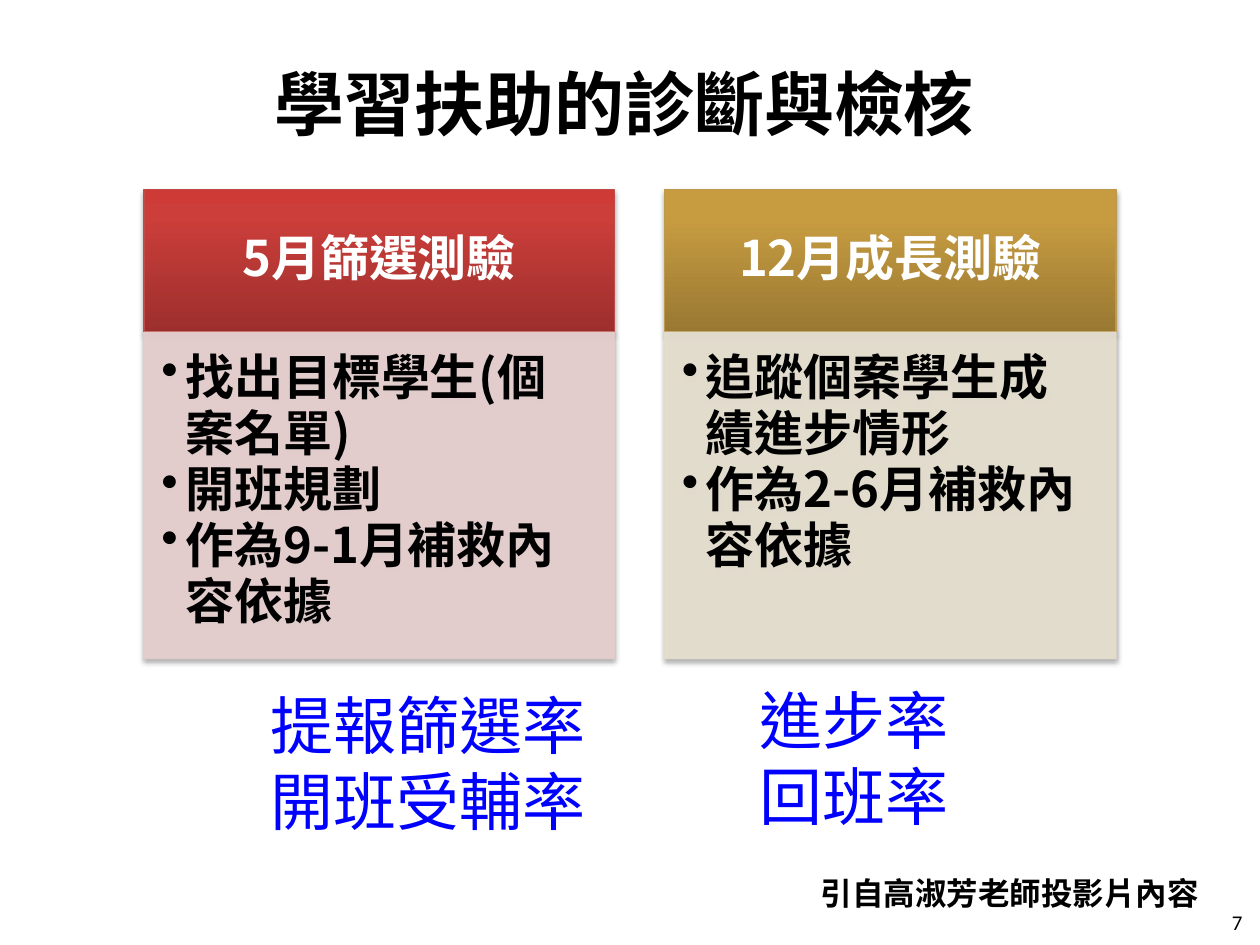
from lxml import etree
from pptx import Presentation
from pptx.dml.color import RGBColor
from pptx.enum import shapes, text
from pptx.oxml.ns import qn
from pptx.util import Pt

SANS = "Noto Sans CJK SC"
CARDS = [
    {
        "left": 82.2, "width": 268.8, "heading": "5月篩選測驗",
        "points": ["找出目標學生(個案名單)", "開班規劃", "作為9-1月補救內容依據"],
        "gradient": [(0, "9C2F2D"), (80, "CB3E3A"), (100, "CE3B37")],
        "edge": "BF4C48", "tint": "E8D0D0", "tint_edge": "E3CBCB",
        "insets": (1.4, 1.4, 1.4, 1.4),
    },
    {
        "left": 379.6, "width": 258.2, "heading": "12月成長測驗",
        "points": ["追蹤個案學生成績進步情形", "作為2-6月補救內容依據"],
        "gradient": [(0, "997832"), (80, "C79C41"), (100, "CA9D3F")],
        "edge": "BB994F", "tint": "E8E1D1", "tint_edge": "E3DCCC",
        "insets": (15.8, 8.6, 15.8, 8.6),
    },
]
CARD_TOP, HEAD_HEIGHT, BODY_HEIGHT = 108.2, 81.6, 186.6
BODY_INSETS = (10, 10, 13.4, 15)
INDENT = 13.7
LEFT, CENTER, RIGHT = (text.PP_ALIGN.LEFT, text.PP_ALIGN.CENTER,
                       text.PP_ALIGN.RIGHT)
TOP, MIDDLE = text.MSO_ANCHOR.TOP, text.MSO_ANCHOR.MIDDLE
LABELS = [
    {"place": (54, 26, 605.5, 65.5), "lines": ["學習扶助的診斷與檢核"],
     "size": 40, "bold": True, "align": CENTER, "anchor": MIDDLE},
    {"place": (677.5, 514, 39.6, 26), "lines": ["7"], "size": 12,
     "face": "Calibri", "align": RIGHT, "anchor": MIDDLE},
    {"place": (147.6, 388.8, 196.6, 94.5), "lines": ["提報篩選率", "開班受輔率"],
     "size": 36, "color": "0000FF", "wrap": False},
    {"place": (427, 385.9, 123.8, 94.5), "lines": ["進步率", "回班率"],
     "size": 36, "color": "0000FF", "wrap": False},
    {"place": (332, 496, 360, 29), "lines": ["引自高淑芳老師投影片內容"],
     "size": 18, "bold": True, "face": "Calibri", "align": RIGHT},
]


def rgb(value):
    return RGBColor.from_string(value)


def add(parent, tag, **attributes):
    values = {key: str(value) for key, value in attributes.items()}
    return etree.SubElement(parent, qn(tag), values)


def write(frame, lines, size, color="000000", bold=False, face=SANS,
          align=LEFT, anchor=TOP, wrap=True):
    frame.word_wrap = wrap
    frame.vertical_anchor = anchor
    for index, line in enumerate(lines):
        para = frame.paragraphs[0] if index == 0 else frame.add_paragraph()
        para.alignment = align
        span = para.add_run()
        span.text = line
        span.font.size = Pt(size)
        span.font.bold = bold
        span.font.color.rgb = rgb(color)
        span.font.name = face
        properties = span.font._element
        properties.set("lang", "zh-TW")
        add(properties, "a:ea", typeface=SANS)


def set_insets(frame, insets):
    (frame.margin_left, frame.margin_top,
     frame.margin_right, frame.margin_bottom) = map(Pt, insets)


def add_panel(page, left, top, width, height, edge):
    box = page.shapes.add_shape(shapes.MSO_SHAPE.RECTANGLE,
                                Pt(left), Pt(top), Pt(width), Pt(height))
    box.line.color.rgb = rgb(edge)
    box.line.width = Pt(0.75)
    box.shadow.inherit = False
    effects = box._element.spPr.find(qn("a:effectLst"))
    shadow = add(effects, "a:outerShdw", blurRad=Pt(3.1), dist=Pt(1.8),
                 dir=5400000, rotWithShape=0)
    add(add(shadow, "a:srgbClr", val="000000"), "a:alpha", val=35000)
    return box


def fill_gradient(box, stops):
    box.fill.gradient()
    box.fill.gradient_angle = 90
    stop_list = box._element.spPr.find(qn("a:gradFill")).find(qn("a:gsLst"))
    for stop in list(stop_list):
        stop_list.remove(stop)
    for position, color in stops:
        add(add(stop_list, "a:gs", pos=position * 1000), "a:srgbClr", val=color)


def fill_tint(box, color):
    box.fill.solid()
    box.fill.fore_color.rgb = rgb(color)
    for solid in box._element.spPr.iter(qn("a:solidFill")):
        add(solid[0], "a:alpha", val=90000)


def add_bullets(frame):
    for para in frame.paragraphs:
        para.line_spacing = Pt(32)
        properties = para._p.get_or_add_pPr()
        properties.set("marL", str(Pt(INDENT)))
        properties.set("indent", str(-Pt(INDENT)))
        add(properties, "a:buChar", char="•")


def add_card(page, card):
    head = add_panel(page, card["left"], CARD_TOP, card["width"],
                     HEAD_HEIGHT, card["edge"])
    fill_gradient(head, card["gradient"])
    set_insets(head.text_frame, card["insets"])
    write(head.text_frame, [card["heading"]], 28, "FFFFFF", True,
          align=CENTER, anchor=MIDDLE)
    head.text_frame.paragraphs[0].line_spacing = 0.9

    body = add_panel(page, card["left"], CARD_TOP + HEAD_HEIGHT, card["width"],
                     BODY_HEIGHT, card["tint_edge"])
    fill_tint(body, card["tint"])
    set_insets(body.text_frame, BODY_INSETS)
    write(body.text_frame, card["points"], 28, bold=True)
    add_bullets(body.text_frame)


def add_label(page, place, **style):
    box = page.shapes.add_textbox(*map(Pt, place))
    write(box.text_frame, **style)


def main():
    deck = Presentation()
    deck.slide_width, deck.slide_height = Pt(720), Pt(540)
    page = deck.slides.add_slide(deck.slide_layouts[6])
    for card in CARDS:
        add_card(page, card)
    for label in LABELS:
        add_label(page, **label)
    deck.save("out.pptx")


if __name__ == "__main__":
    main()
